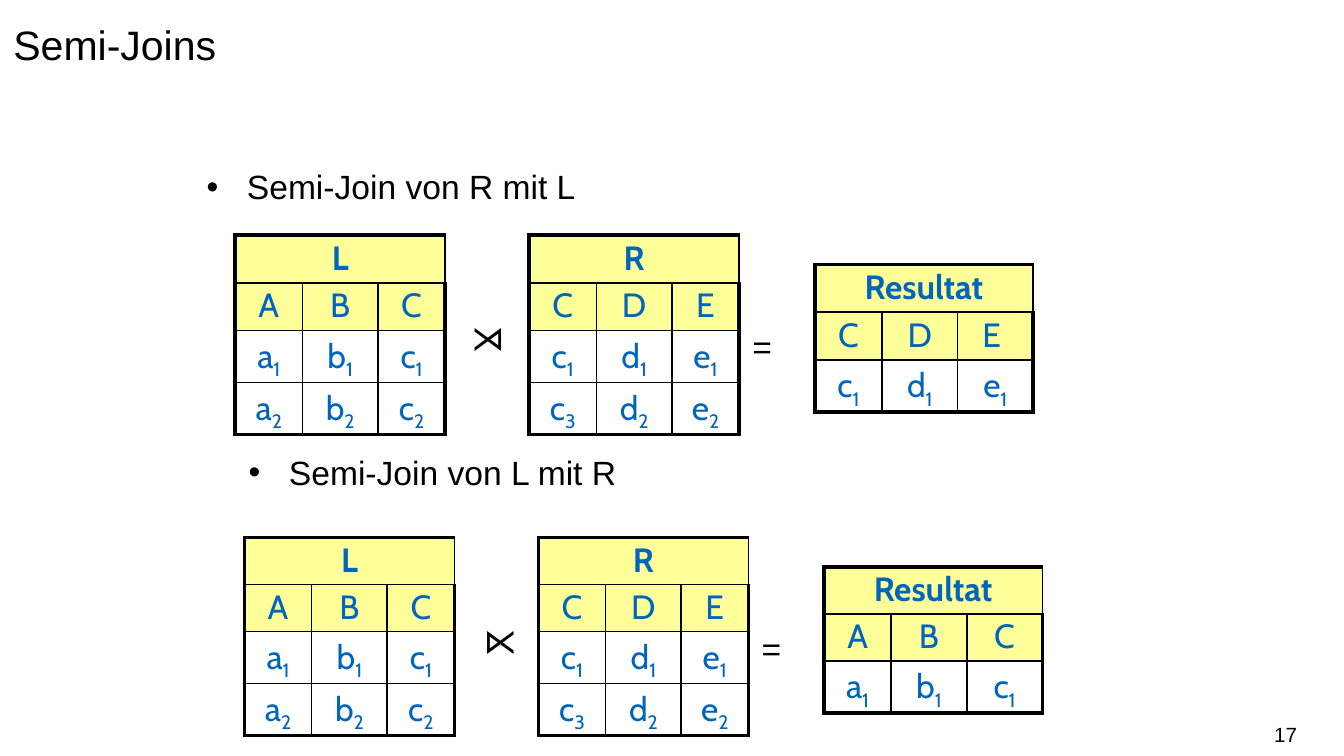
"""Build the semi-join slide: two joins, each with two input tables and a result."""
from dataclasses import dataclass

from lxml import etree
from pptx import Presentation
from pptx import util as u
from pptx.dml.color import RGBColor
from pptx.enum import text
from pptx.oxml import ns

COLUMNS, ROWS = 160, 90
WIDTH, HEIGHT = u.Inches(10), u.Inches(5.625)
BLACK, BLUE, YELLOW, WHITE = "000000", "0065BD", "FFFF99", "FFFFFF"
ROW_HEIGHT = 5.5
LEFT, CENTER, RIGHT = text.PP_ALIGN.LEFT, text.PP_ALIGN.CENTER, text.PP_ALIGN.RIGHT
PLAIN = {"size": u.Pt(18), "name": "Arial", "bold": False}


@dataclass(frozen=True)
class Relation:
    name: str
    attributes: tuple[str, ...]
    tuples: tuple[str, ...]
    left: float
    top: float
    widths: tuple[int, ...] = (8, 9, 8)


@dataclass(frozen=True)
class SemiJoin:
    heading: str
    heading_at: tuple[float, float]
    symbol: str
    symbol_left: float
    shift: tuple[float, float]
    result_attributes: tuple[str, ...]
    result_tuple: str


INPUTS = (
    Relation("L", ("A", "B", "C"), ("a1 b1 c1", "a2 b2 c2"), 28, 28),
    Relation("R", ("C", "D", "E"), ("c1 d1 e1", "c3 d2 e2"), 63, 28),
)
JOINS = (
    SemiJoin("Semi-Join von R mit L", (23, 19), "⋊", 54.5, (0, 0),
             ("C", "D", "E "), "c1 d1 e1"),
    SemiJoin("Semi-Join von L mit R", (28, 53), "⋉", 56, (1.1, 36),
             ("A", "B", "C"), "a1 b1 c1"),
)


def across(columns: float) -> int:
    """Convert grid columns to a length."""
    return round(WIDTH * columns / COLUMNS)


def down(rows: float) -> int:
    """Convert grid rows to a length."""
    return round(HEIGHT * rows / ROWS)


def box(left: float, top: float, width: float, height: float) -> tuple[int, ...]:
    """Return a grid rectangle as lengths."""
    return across(left), down(top), across(width), down(height)


def color(value: str) -> RGBColor:
    """Turn a hex string into a colour."""
    return RGBColor.from_string(value)


def apply(target, values: dict) -> None:
    """Set every given attribute on the target."""
    for key, value in values.items():
        setattr(target, key, value)


def write(paragraph, words: str, hue: str = BLACK, align=LEFT, **changes):
    """Add one formatted run to a paragraph."""
    paragraph.alignment = align
    run = paragraph.add_run()
    run.text = words
    apply(run.font, PLAIN | changes)
    run.font.color.rgb = color(hue)
    return run


def place(shape, area: tuple[int, ...]) -> None:
    """Move and size a shape."""
    apply(shape, dict(zip(("left", "top", "width", "height"), area)))


def add_label(slide, words: str, area: tuple[int, ...], frame_values=None, **style) -> None:
    """Draw a text box with a single line."""
    frame = slide.shapes.add_textbox(*area).text_frame
    apply(frame, {"word_wrap": True} | (frame_values or {}))
    write(frame.paragraphs[0], words, **style)


def fill_heading(placeholder, join: SemiJoin) -> None:
    """Write a bulleted heading into a body placeholder."""
    place(placeholder, box(*join.heading_at, 51, 6.4))
    frame = placeholder.text_frame
    apply(frame, {"auto_size": text.MSO_AUTO_SIZE.NONE, "word_wrap": True})
    paragraph = frame.paragraphs[0]
    properties = paragraph._p.get_or_add_pPr()
    indent = u.Inches(0.3)
    properties.set("marL", str(indent))
    properties.set("indent", str(-indent))
    etree.SubElement(properties, ns.qn("a:buChar"), char="•")
    paragraph.space_before = u.Pt(0)
    write(paragraph, join.heading)


def set_borders(cell, points: dict[str, float]) -> None:
    """Give each side of a cell a black line."""
    properties = cell._tc.get_or_add_tcPr()
    for index, (side, width) in enumerate(points.items()):
        line = etree.Element(ns.qn(f"a:ln{side}"), w=str(u.Pt(width)))
        solid = etree.SubElement(line, ns.qn("a:solidFill"))
        etree.SubElement(solid, ns.qn("a:srgbClr"), val=BLACK)
        properties.insert(index, line)


def add_relation(slide, relation: Relation, shift: tuple[float, float]) -> None:
    """Draw a relation as a table with name, attributes and tuples."""
    lines = [(relation.name, "", ""), relation.attributes]
    lines += [row.split() for row in relation.tuples]
    last_row, last_column = len(lines) - 1, len(relation.widths) - 1
    area = box(relation.left + shift[0], relation.top + shift[1],
               sum(relation.widths), ROW_HEIGHT * len(lines))
    table = slide.shapes.add_table(len(lines), len(relation.widths), *area).table
    apply(table, {"first_row": False, "horz_banding": False})
    for column, width in zip(table.columns, relation.widths):
        column.width = across(width)
    for r, values in enumerate(lines):
        table.rows[r].height = down(ROW_HEIGHT)
        for c, value in enumerate(values):
            cell = table.cell(r, c)
            apply(cell, {"margin_left": 0, "margin_right": 0,
                         "margin_top": u.Inches(0.04), "margin_bottom": u.Inches(0.04)})
            cell.fill.solid()
            cell.fill.fore_color.rgb = color(YELLOW if r < 2 else WHITE)
            outer = {"L": c == 0, "R": c == last_column, "T": r == 0, "B": r == last_row}
            set_borders(cell, {side: 2.25 if edge else 1 for side, edge in outer.items()})
            paragraph = cell.text_frame.paragraphs[0]
            paragraph.line_spacing = 0.9
            style = {"hue": BLUE, "align": CENTER, "name": "Cabin", "bold": r == 0}
            letter, index = (value, "") if r < 2 else (value[0], value[1:])
            if letter:
                write(paragraph, letter, **style)
            if index:
                subscript = write(paragraph, index, **style)
                subscript._r.get_or_add_rPr().set("baseline", "-25000")
    table.cell(0, 0).merge(table.cell(0, last_column))


def add_join(slide, join: SemiJoin) -> None:
    """Draw the inputs, operator, equals sign and result of a semi-join."""
    dx, dy = join.shift
    result = Relation("Resultat", join.result_attributes, (join.result_tuple,),
                      97, 31.5, (8, 9, 9))
    for relation in (*INPUTS, result):
        add_relation(slide, relation, join.shift)
    add_label(slide, join.symbol, box(join.symbol_left, 37 + dy, 7, 6.4), name="Lato")
    add_label(slide, "=", box(88 + dx, 38 + dy, 9, 6.4))


def main() -> None:
    """Build and save the slide."""
    deck = Presentation()
    apply(deck, {"slide_width": WIDTH, "slide_height": HEIGHT})
    slide = deck.slides.add_slide(deck.slide_layouts[3])
    title, *headings = slide.placeholders
    place(title, box(0, 0, COLUMNS, 15))
    apply(title.text_frame, {"vertical_anchor": text.MSO_ANCHOR.TOP,
                             "auto_size": text.MSO_AUTO_SIZE.NONE})
    title.text_frame.paragraphs[0].line_spacing = 1.25
    write(title.text_frame.paragraphs[0], "Semi-Joins", size=u.Pt(22))
    for heading, join in zip(headings, JOINS):
        fill_heading(heading, join)
        add_join(slide, join)
    add_label(slide, "17", box(118.5, 85, 35.9, 4.8),
              {"vertical_anchor": text.MSO_ANCHOR.MIDDLE, "margin_left": 0, "margin_right": 0},
              align=RIGHT, size=u.Pt(11))
    deck.save("out.pptx")


if __name__ == "__main__":
    main()
